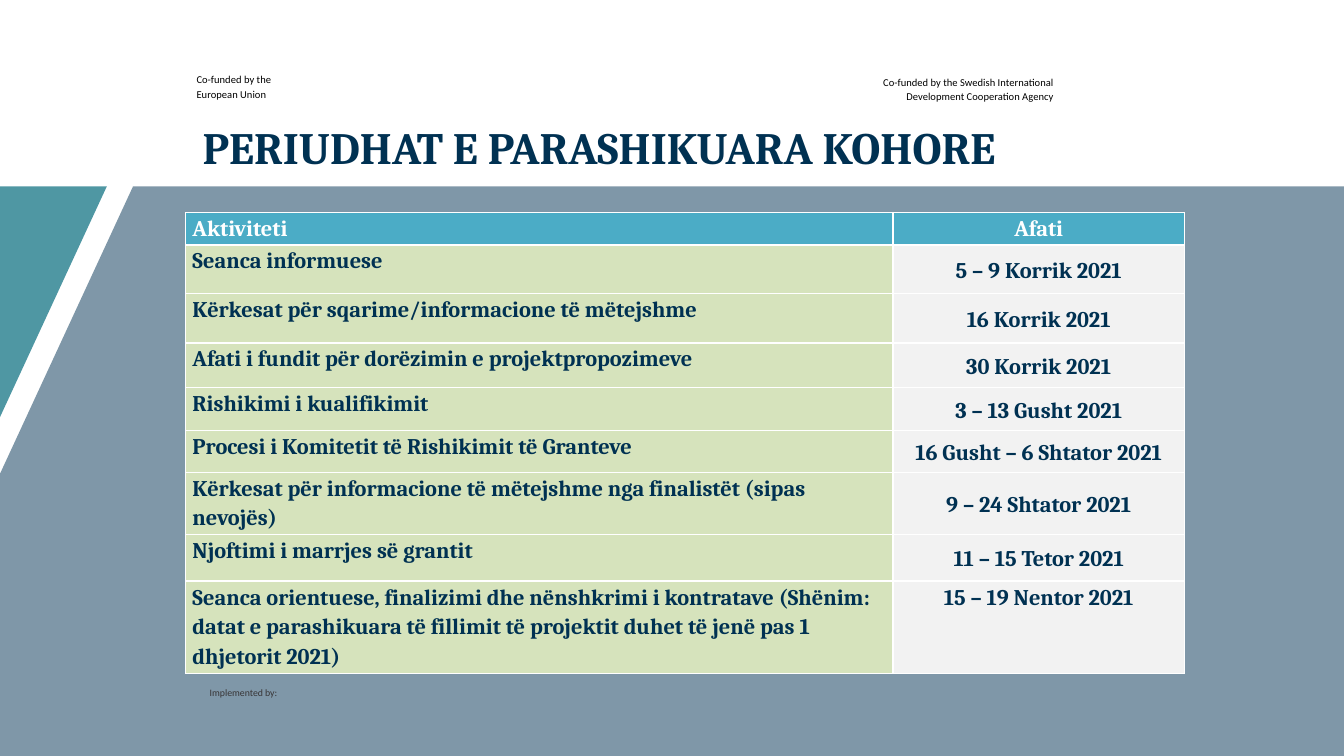
from lxml.etree import SubElement
from pptx import Presentation
from pptx.dml.color import RGBColor
from pptx.enum.text import MSO_ANCHOR as Anchor, MSO_AUTO_SIZE as Fit, PP_ALIGN as Align
from pptx.oxml.ns import qn
from pptx.util import Pt

NAVY = RGBColor(0x00, 0x31, 0x52)
TEAL = RGBColor(0x4F, 0x97, 0xA3)
BLUE = RGBColor(0x4B, 0xAC, 0xC6)
GREEN = RGBColor(0xD6, 0xE3, 0xBC)
PALE = RGBColor(0xF2, 0xF2, 0xF2)
WHITE = RGBColor(0xFF, 0xFF, 0xFF)
BLACK = RGBColor(0x00, 0x00, 0x00)
GREY = RGBColor(0x37, 0x34, 0x35)

deck = Presentation()
deck.slide_width, deck.slide_height = Pt(960), Pt(540)
slide = deck.slides.add_slide(deck.slide_layouts[5])
shapes = slide.shapes


def write(frame, text, size, color, align, face="Cambria", bold=True, lead=1.15):
    """Fill a text frame with one formatted paragraph."""
    frame.word_wrap = True
    para = frame.paragraphs[0]
    para.text = text
    para.alignment = align
    para.line_spacing = lead
    font = para.font
    font.name, font.size, font.bold = face, Pt(size), bold
    font.color.rgb = color


def draw(points, color):
    """Draw a closed outline with a plain fill."""
    pen = shapes.build_freeform(Pt(points[0][0]), Pt(points[0][1]), scale=1.0)
    pen.add_line_segments([(Pt(x), Pt(y)) for x, y in points[1:]], close=True)
    form = pen.convert_to_shape()
    form.shadow.inherit = False
    form.fill.solid()
    form.fill.fore_color.rgb = color
    form.line.fill.background()
    return form


# Background band, half transparent, and the teal corner
band = draw([(95, 133.2), (960, 133.2), (960, 540), (0, 540), (0, 338.4)], NAVY)
tint = band.fill._xPr.find(".//" + qn("a:srgbClr"))
SubElement(tint, qn("a:alpha"), val="50000")
draw([(0, 133.2), (76.3, 133.2), (0, 298)], TEAL)

# Funding and partner credits
credits = [
    ("Co-funded by the European Union", 140.4, 51.1, 73.4, 21.6, 7.5, BLACK, Align.LEFT, 1.15),
    ("Co-funded by the Swedish International Development Cooperation Agency",
     617.8, 52.6, 134.6, 39.6, 7.5, BLACK, Align.RIGHT, 1.15),
    ("Implemented by:", 149.8, 490.3, 102.2, 14.4, 7, GREY, Align.JUSTIFY, 1),
]
for text, left, top, width, height, size, color, align, lead in credits:
    frame = shapes.add_textbox(Pt(left), Pt(top), Pt(width), Pt(height)).text_frame
    frame.margin_left = frame.margin_right = frame.margin_top = frame.margin_bottom = 0
    write(frame, text, size, color, align, "Calibri", False, lead)

# Title
title = shapes.title
title.left, title.top, title.width, title.height = Pt(85), Pt(69.8), Pt(686.2), Pt(63.4)
title.text_frame.auto_size = Fit.NONE
title.text_frame.vertical_anchor = Anchor.MIDDLE
write(title.text_frame, "PERIUDHAT E PARASHIKUARA KOHORE", 32, NAVY, Align.CENTER)

# Timetable: activity, deadline, row height
rows = [
    ("Aktiviteti", "Afati", 23),
    ("Seanca informuese", "5 – 9 Korrik 2021", 34.5),
    ("Kërkesat për sqarime/informacione të mëtejshme", "16 Korrik 2021", 35.5),
    ("Afati i fundit për dorëzimin e projektpropozimeve", "30 Korrik 2021", 32),
    ("Rishikimi i kualifikimit", "3 – 13 Gusht 2021", 30.5),
    ("Procesi i Komitetit të Rishikimit të Granteve", "16 Gusht – 6 Shtator 2021", 30),
    ("Kërkesat për informacione të mëtejshme nga finalistët (sipas nevojës)",
     "9 – 24 Shtator 2021", 42.5),
    ("Njoftimi i marrjes së grantit", "11 – 15 Tetor 2021", 33.5),
    ("Seanca orientuese, finalizimi dhe nënshkrimi i kontratave (Shënim: datat e "
     "parashikuara të fillimit të projektit duhet të jenë pas 1 dhjetorit 2021)",
     "15 – 19 Nentor 2021", 64),
]
last = len(rows) - 1
total = sum(row[2] for row in rows)
table = shapes.add_table(len(rows), 2, Pt(132.5), Pt(152), Pt(713.5), Pt(total)).table
table.columns[0].width, table.columns[1].width = Pt(505.4), Pt(208.1)

for r, (task, date, height) in enumerate(rows):
    table.rows[r].height = Pt(height)
    for c, text in enumerate((task, date)):
        cell = table.cell(r, c)
        cell.margin_left = cell.margin_right = Pt(5)
        cell.margin_top = cell.margin_bottom = 0
        centred = c == 1 and 0 < r < last
        cell.vertical_anchor = Anchor.MIDDLE if centred else Anchor.TOP
        write(cell.text_frame, text, 16, NAVY if r else WHITE,
              Align.CENTER if c else Align.LEFT)
        # White cell borders, which come before the fill
        props = cell._tc.get_or_add_tcPr()
        for side in ("lnL", "lnR", "lnT", "lnB"):
            edge = SubElement(props, qn("a:" + side), w=str(Pt(1)))
            SubElement(SubElement(edge, qn("a:solidFill")), qn("a:srgbClr"), val=str(WHITE))
        cell.fill.solid()
        cell.fill.fore_color.rgb = (GREEN, PALE)[c] if r else BLUE

deck.save("out.pptx")
